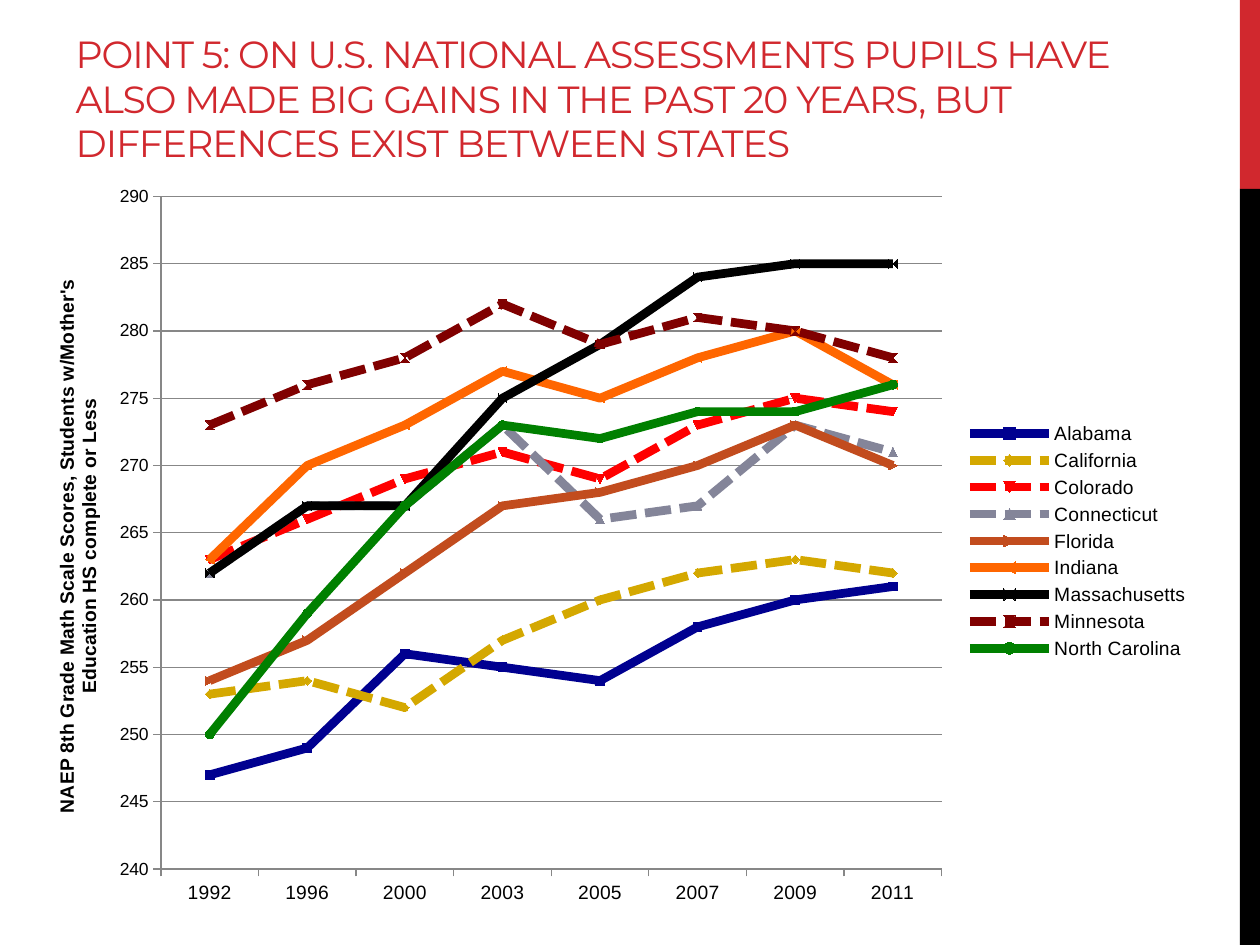
from dataclasses import dataclass

from lxml import etree
from pptx import Presentation
from pptx import util as u
from pptx.chart.data import CategoryChartData
from pptx.dml.color import RGBColor
from pptx.enum import chart as ch
from pptx.enum import dml, shapes, text
from pptx.oxml import ns


@dataclass(frozen=True)
class Theme:
    red: str = "D1282E"
    black: str = "000000"
    grid: str = "878787"
    title_font: str = "Montserrat"
    chart_font: str = "Arial"
    title_size: float = 21.6
    label_size: float = 11
    value_size: float = 10
    line_width: float = 5


@dataclass(frozen=True)
class Box:
    """A rectangle in shares of its container's width and height."""
    left: float
    top: float
    width: float
    height: float


@dataclass(frozen=True)
class State:
    name: str
    color: str
    scores: tuple[int, ...]
    dashed: bool = False


THEME = Theme()
WIDTH, HEIGHT = u.Inches(10), u.Inches(7.5)
YEARS = ("1992", "1996", "2000", "2003", "2005", "2007", "2009", "2011")
STATES = (
    State("Alabama", "000090", (247, 249, 256, 255, 254, 258, 260, 261)),
    State("California", "D4A800", (253, 254, 252, 257, 260, 262, 263, 262), True),
    State("Colorado", "FF0000", (263, 266, 269, 271, 269, 273, 275, 274), True),
    State("Connecticut", "848599", (262, 267, 267, 273, 266, 267, 273, 271), True),
    State("Florida", "C24C1E", (254, 257, 262, 267, 268, 270, 273, 270)),
    State("Indiana", "FF6600", (263, 270, 273, 277, 275, 278, 280, 276)),
    State("Massachusetts", "000000", (262, 267, 267, 275, 279, 284, 285, 285)),
    State("Minnesota", "800000", (273, 276, 278, 282, 279, 281, 280, 278), True),
    State("North Carolina", "008000", (250, 259, 267, 273, 272, 274, 274, 276)),
)
TITLE = ("POINT 5: ON U.S. NATIONAL ASSESSMENTS PUPILS HAVE ALSO MADE BIG GAINS "
         "IN THE PAST 20 YEARS, BUT DIFFERENCES EXIST BETWEEN STATES")
AXIS_TITLE = ("NAEP 8th Grade Math Scale Scores, Students w/Mother's "
              "Education HS complete or Less")


def place(box: Box) -> tuple[int, int, int, int]:
    return (round(box.left * WIDTH), round(box.top * HEIGHT),
            round(box.width * WIDTH), round(box.height * HEIGHT))


def style_font(font, *, name: str, size: float, color: str, bold: bool = False) -> None:
    font.name, font.size, font.bold = name, u.Pt(size), bold
    font.color.rgb = RGBColor.from_string(color)


def write(frame, words: str, *, spacing: float = 0, line_spacing: float | None = None,
          **font_format) -> None:
    paragraph = frame.paragraphs[0]
    paragraph.line_spacing = line_spacing
    run = paragraph.add_run()
    run.text = words
    style_font(run.font, **font_format)
    if spacing:
        run.font._element.set("spc", str(round(spacing * 100)))


def add_bar(slide, box: Box, color: str) -> None:
    bar = slide.shapes.add_shape(shapes.MSO_SHAPE.RECTANGLE, *place(box))
    bar.shadow.inherit = False
    bar.fill.solid()
    bar.fill.fore_color.rgb = RGBColor.from_string(color)
    bar.line.fill.background()


def add_title(slide) -> None:
    title = slide.shapes.title
    title.left, title.top, title.width, title.height = place(Box(0.05, 0.023, 0.885, 0.16))
    frame = title.text_frame
    frame.word_wrap = True
    frame.auto_size = text.MSO_AUTO_SIZE.NONE
    frame.vertical_anchor = text.MSO_ANCHOR.BOTTOM
    write(frame, TITLE, spacing=-0.6, line_spacing=0.98, name=THEME.title_font,
          size=THEME.title_size, color=THEME.red)
    frame.paragraphs[0].alignment = text.PP_ALIGN.LEFT


def set_layout(element, box: Box, after: str | None = None, inner: bool = False) -> None:
    """Fix a chart part's position, after the named child or as the first one."""
    for old in element.findall(ns.qn("c:layout")):
        element.remove(old)
    layout = etree.Element(ns.qn("c:layout"))
    manual = etree.SubElement(layout, ns.qn("c:manualLayout"))
    settings = {"layoutTarget": "inner"} if inner else {}
    settings |= {"xMode": "edge", "yMode": "edge", "x": box.left, "y": box.top}
    if box.width:
        settings |= {"w": box.width, "h": box.height}
    for tag, value in settings.items():
        etree.SubElement(manual, ns.qn(f"c:{tag}")).set("val", str(value))
    if after:
        element.find(ns.qn(after)).addnext(layout)
    else:
        element.insert(0, layout)


def style_axes(chart) -> None:
    grid = RGBColor.from_string(THEME.grid)
    values, years = chart.value_axis, chart.category_axis
    values.minimum_scale, values.maximum_scale, values.major_unit = 240, 290, 5
    values.has_major_gridlines = True
    values.tick_labels.number_format = "0"
    values.tick_labels.number_format_is_linked = False
    for line in (values.major_gridlines.format.line, values.format.line, years.format.line):
        line.color.rgb = grid
        line.width = u.Pt(0.75)
    for axis, size in ((values, THEME.value_size), (years, THEME.label_size)):
        axis.major_tick_mark = ch.XL_TICK_MARK.OUTSIDE
        axis.minor_tick_mark = ch.XL_TICK_MARK.NONE
        style_font(axis.tick_labels.font, name=THEME.chart_font, size=size, color=THEME.black)
    write(values.axis_title.text_frame, AXIS_TITLE, name=THEME.chart_font,
          size=THEME.label_size, color=THEME.black, bold=True)
    set_layout(values.axis_title._element, Box(0.026, 0.14, 0, 0), after="c:tx")


def style_series(series, state: State) -> None:
    color = RGBColor.from_string(state.color)
    series.smooth = False
    line = series.format.line
    line.color.rgb = color
    line.width = u.Pt(THEME.line_width)
    if state.dashed:
        line.dash_style = dml.MSO_LINE.SQUARE_DOT
    marker = series.marker.format
    marker.fill.solid()
    marker.fill.fore_color.rgb = color
    marker.line.color.rgb = color


def add_score_chart(slide) -> None:
    data = CategoryChartData(number_format="0")
    data.categories = YEARS
    for state in STATES:
        data.add_series(state.name, state.scores)
    chart = slide.shapes.add_chart(ch.XL_CHART_TYPE.LINE_MARKERS,
                                   *place(Box(0.015, 0.181, 0.939, 0.791)), data).chart
    chart.has_title = False
    style_font(chart.font, name=THEME.chart_font, size=THEME.value_size, color=THEME.black)
    chart.plots[0].vary_by_categories = False
    for series, state in zip(chart.plots[0].series, STATES):
        style_series(series, state)
    style_axes(chart)
    chart.has_legend = True
    legend = chart.legend
    legend.position = ch.XL_LEGEND_POSITION.RIGHT
    legend.include_in_layout = False
    style_font(legend.font, name=THEME.chart_font, size=THEME.label_size, color=THEME.black)
    set_layout(legend._element, Box(0.8, 0.33, 0.19, 0.33), after="c:legendPos")
    plot_area = chart._chartSpace.chart.plotArea
    set_layout(plot_area, Box(0.12, 0.034, 0.66, 0.9), inner=True)


def main() -> None:
    presentation = Presentation()
    presentation.slide_width, presentation.slide_height = WIDTH, HEIGHT
    slide = presentation.slides.add_slide(presentation.slide_layouts[5])
    add_bar(slide, Box(0.984, 0, 0.016, 0.2), THEME.red)
    add_bar(slide, Box(0.984, 0.2, 0.016, 0.8), THEME.black)
    add_title(slide)
    add_score_chart(slide)
    presentation.save("out.pptx")


if __name__ == "__main__":
    main()
